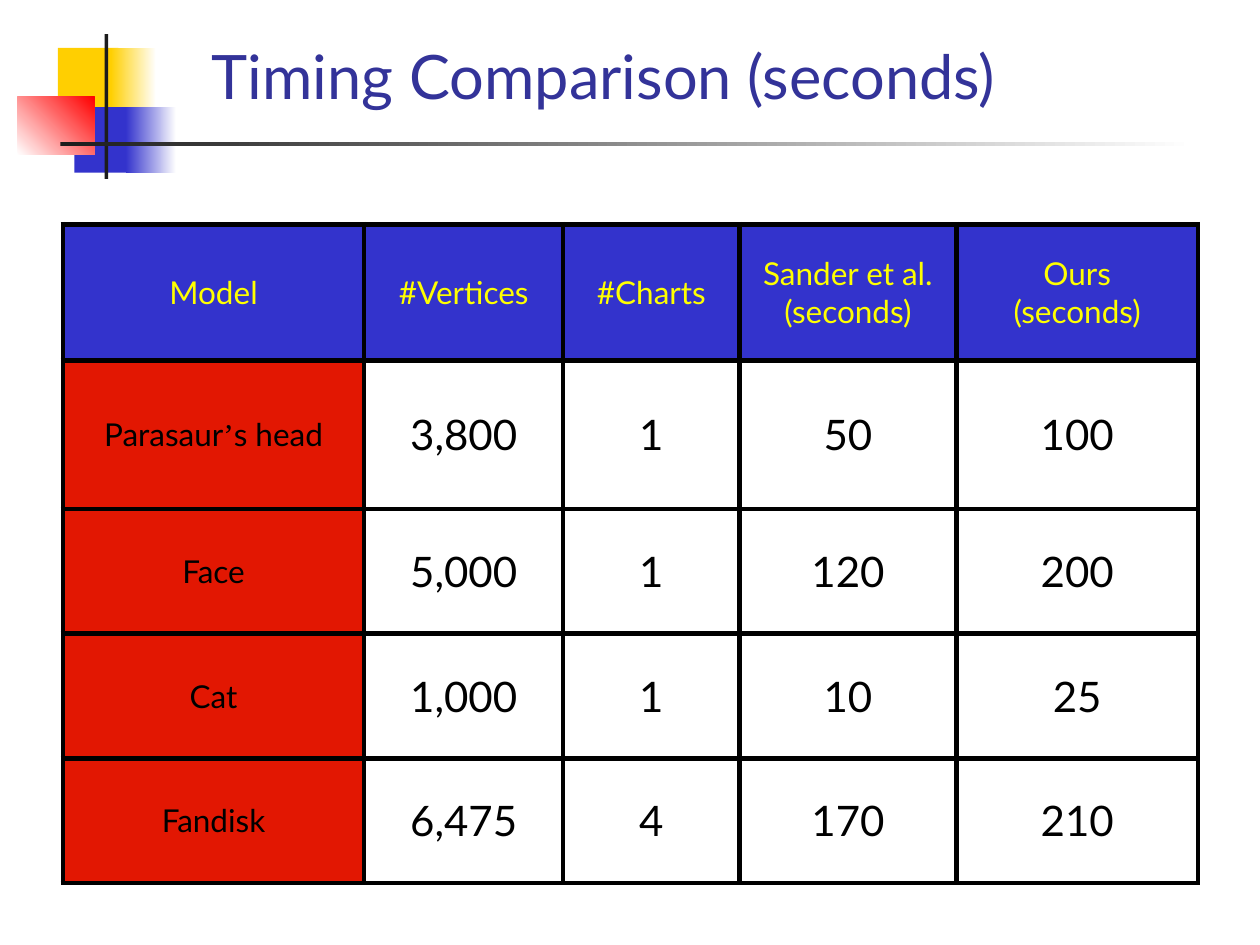
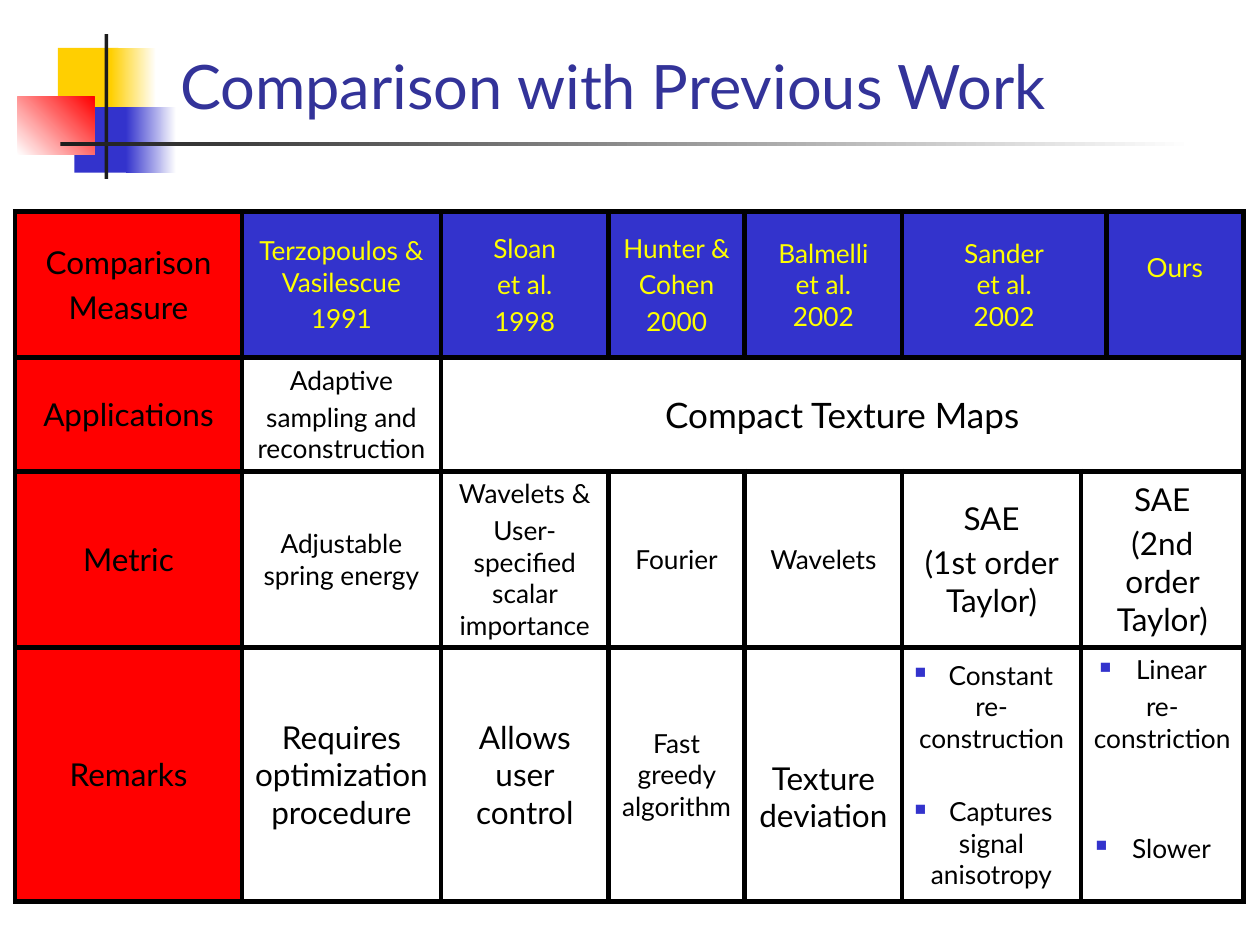
from dataclasses import dataclass

from lxml import etree
from pptx import Presentation
from pptx.dml.color import RGBColor as RGB
from pptx.enum.shapes import MSO_SHAPE
from pptx.enum.text import MSO_ANCHOR, MSO_AUTO_SIZE, PP_ALIGN
from pptx.oxml.ns import qn
from pptx.util import Pt

PX = 9144  # EMU per px, 100 px to the inch


@dataclass(frozen=True)
class Theme:
    font: str = "Lato"
    quote_font: str = "Times New Roman"
    title: str = "333399"
    yellow: str = "FFCF01"
    blue: str = "3333CC"
    red: str = "FF0000"
    brick: str = "E21702"
    ink: str = "1C1C1C"
    black: str = "000000"
    white: str = "FFFFFF"
    header_text: str = "FFFF00"
    title_size: int = 35
    big: int = 24
    wide: int = 20
    label: int = 18
    small: int = 15
    lead: float = 0.2
    border: int = 3


T = Theme()


def format_cell(cell, text, size, color, fill, lead):
    """Write one paragraph per line (■ marks a bullet), then fill and border the cell."""
    cell.vertical_anchor = MSO_ANCHOR.MIDDLE
    tf = cell.text_frame
    for i, line in enumerate(text.split("\n")):
        p = tf.paragraphs[0] if i == 0 else tf.add_paragraph()
        p.text = line.removeprefix("■")
        p.alignment = PP_ALIGN.CENTER
        p.space_before = Pt(lead * size)
        p.font.name, p.font.size = T.font, Pt(size)
        p.font.color.rgb = RGB.from_string(color)
        if line.startswith("■"):
            text_props = p.font.color and p._p.pPr.find(qn("a:defRPr"))
            bullet_color = etree.Element(qn("a:buClr"))
            etree.SubElement(bullet_color, qn("a:srgbClr"), val=T.blue)
            text_props.addprevious(bullet_color)
            text_props.addprevious(etree.Element(qn("a:buSzPct"), val="60000"))
            text_props.addprevious(etree.Element(qn("a:buChar"), char="■"))

    cell.fill.solid()
    cell.fill.fore_color.rgb = RGB.from_string(fill)
    tc_pr = cell._tc.get_or_add_tcPr()
    for i, side in enumerate("LRTB"):
        ln = etree.Element(qn(f"a:ln{side}"), w=str(Pt(T.border)))
        solid = etree.SubElement(ln, qn("a:solidFill"))
        etree.SubElement(solid, qn("a:srgbClr"), val=T.black)
        tc_pr.insert(i, ln)


def add_table_slide(title, title_box, corner, widths, heights, rows,
                    label_fill, corner_is_header, tight_from):
    """Add a titled slide with a table; header columns from tight_from on have no lead."""
    s = prs.slides.add_slide(layout)
    sp = s.shapes.title
    sp.left, sp.top, sp.width, sp.height = (v * PX for v in title_box)
    tf = sp.text_frame
    tf.text = title
    tf.word_wrap, tf.auto_size = True, MSO_AUTO_SIZE.NONE
    tf.vertical_anchor = MSO_ANCHOR.BOTTOM
    p = tf.paragraphs[0]
    p.alignment = PP_ALIGN.LEFT
    p.font.name, p.font.size = T.font, Pt(T.title_size)
    p.font.color.rgb = RGB.from_string(T.title)

    left, top = corner
    table = s.shapes.add_table(len(heights), len(widths), left * PX, top * PX,
                               sum(widths) * PX, sum(heights) * PX).table
    table.first_row = table.horz_banding = False
    for column, width in zip(table.columns, widths):
        column.width = width * PX
    for row, height in zip(table.rows, heights):
        row.height = height * PX
    for r, row in enumerate(rows):
        for c, (text, size) in enumerate(row):
            color, fill = T.black, T.white
            if r == 0 and (c > 0 or corner_is_header):
                color, fill = T.header_text, T.blue
            elif c == 0:
                fill = label_fill
            lead = 0 if r == 0 and c >= tight_from else T.lead
            format_cell(table.cell(r, c), text, size, color, fill, lead)
    return table


prs = Presentation()
prs.slide_width, prs.slide_height = 1000 * PX, 750 * PX
layout = prs.slide_layouts[5]

# Slide 1: timing table
timings = [
    ["Model", "#Vertices", "#Charts", "Sander et al.\n(seconds)", "Ours\n(seconds)"],
    ["Parasaur’s head", "3,800", "1", "50", "100"],
    ["Face", "5,000", "1", "120", "200"],
    ["Cat", "1,000", "1", "10", "25"],
    ["Fandisk", "6,475", "4", "170", "210"],
]
timing_rows = [[(text, T.big if r and c else T.label) for c, text in enumerate(row)]
               for r, row in enumerate(timings)]
timing = add_table_slide("Timing Comparison (seconds)", (158, 33, 675, 61), (50, 178),
                         [239, 158, 140, 172, 192], [108, 118, 99, 99, 99],
                         timing_rows, T.brick, True, 3)
p = timing.cell(1, 0).text_frame.paragraphs[0]
p.clear()
for text, font in (("Parasaur", T.font), ("’", T.quote_font), ("s head", T.font)):
    r = p.add_run()
    r.text, r.font.name = text, font

# Slide 2: comparison of methods
MERGED = ("", T.small)
method_rows = [
    [("Comparison\nMeasure", T.label), ("Terzopoulos & Vasilescue\n1991", T.small),
     ("Sloan\net al.\n1998", T.small), ("Hunter &\nCohen\n2000", T.small),
     ("Balmelli\net al.\n2002", T.small), ("Sander\net al.\n2002", T.small),
     MERGED, ("Ours", T.small)],
    [("Applications", T.label), ("Adaptive\nsampling and reconstruction", T.small),
     ("Compact Texture Maps", T.wide)] + [MERGED] * 5,
    [("Metric", T.label), ("Adjustable spring energy", T.small),
     ("Wavelets &\nUser- specified scalar importance", T.small),
     ("Fourier", T.small), ("Wavelets", T.small),
     ("SAE\n(1st order Taylor)", T.label), ("SAE\n(2nd order Taylor)", T.label), MERGED],
    [("Remarks", T.label), ("Requires optimization procedure", T.label),
     ("Allows user control", T.label), ("Fast greedy algorithm", T.small),
     ("Texture deviation", T.label),
     ("■ Constant re-construction\n■ Captures signal anisotropy", T.small),
     ("■ Linear\nre-constriction\n■ Slower", T.small), MERGED],
]
methods = add_table_slide("Comparison with Previous Work", (133, 25, 733, 77), (12, 168),
                          [180, 158, 133, 108, 125, 142, 20, 109], [116, 90, 140, 201],
                          method_rows, T.red, False, 4)
for row, first, last in ((0, 5, 6), (1, 2, 7), (2, 6, 7), (3, 6, 7)):
    methods.cell(row, first).merge(methods.cell(row, last))
methods.cell(0, 7).margin_bottom = 33 * PX
methods.cell(3, 4).margin_top = 40 * PX
methods.cell(3, 6).margin_bottom = 30 * PX
methods.cell(3, 5).text_frame.paragraphs[1].space_before = Pt(24)
methods.cell(3, 6).text_frame.paragraphs[2].space_before = Pt(45)

# Shared squares and rules, moved to the back of the layout
decorations = [
    ((46, 38, 48, 52), [T.yellow], 0),
    ((88, 38, 36, 52), [T.yellow, T.white], 0),
    ((59, 85, 46, 52), [T.blue], 0),
    ((100, 85, 40, 52), [T.blue, T.white], 0),
    ((14, 77, 61, 46), [T.white, T.red], 45),
    ((83, 27, 3, 115), [T.ink], 0),
    ((48, 113, 900, 3), [T.ink, T.white], 0),
]
layout_tree = layout.shapes.element
for i, (box, colors, angle) in enumerate(decorations):
    sp = prs.slides[0].shapes.add_shape(MSO_SHAPE.RECTANGLE, *(v * PX for v in box))
    sp.shadow.inherit = False
    sp.line.fill.background()
    if len(colors) == 1:
        sp.fill.solid()
        sp.fill.fore_color.rgb = RGB.from_string(colors[0])
    else:
        sp.fill.gradient()
        sp.fill.gradient_angle = angle
        for stop, color in zip(sp.fill.gradient_stops, colors):
            stop.color.rgb = RGB.from_string(color)
    sp.element.nvSpPr.cNvPr.set("id", str(100 + i))
    layout_tree.insert(2 + i, sp.element)

prs.save("out.pptx")
